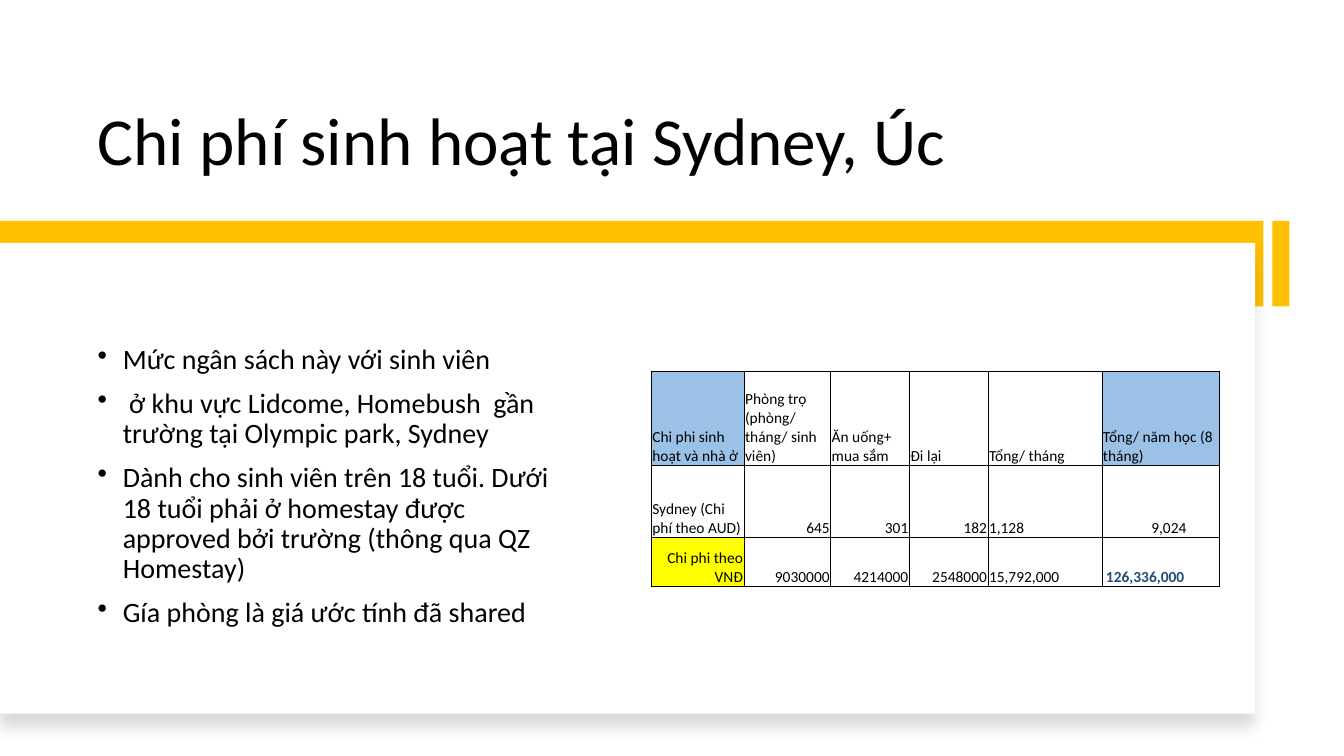
"""Build the slide on student living costs in Sydney."""
from dataclasses import dataclass

from lxml.etree import SubElement
from pptx import Presentation
from pptx.dml.color import RGBColor
from pptx.enum.shapes import MSO_SHAPE
from pptx.enum.text import MSO_ANCHOR, PP_ALIGN
from pptx.oxml import parse_xml
from pptx.oxml.ns import nsdecls, qn
from pptx.util import Inches, Pt

FONT = "Calibri"
COLORS = {
    "black": "000000",
    "white": "FFFFFF",
    "gold": "FFC000",
    "blue": "9BC2E6",
    "yellow": "FFFF00",
    "navy": "1F4E78",
}


@dataclass
class Block:
    """A plain rectangle, in inches."""
    left: float
    top: float
    width: float
    height: float
    color: str
    shadow: bool = False


@dataclass
class Cell:
    """A table cell and how it differs from the rest."""
    text: str
    right: bool = False
    fill: str = ""
    color: str = "black"
    bold: bool = False
    indent: float = 0.01


BLOCKS = [
    Block(0, 2.19, 12.53, 0.85, "gold"),
    Block(0, 2.41, 12.45, 4.67, "white", shadow=True),
    Block(12.62, 2.19, 0.17, 0.85, "gold"),
]
BULLETS = [
    "Mức ngân sách này với sinh viên",
    " ở khu vực Lidcome, Homebush  gần trường tại Olympic park, Sydney",
    "Dành cho sinh viên trên 18 tuổi. Dưới 18 tuổi phải ở homestay được "
    "approved bởi trường (thông qua QZ Homestay)",
    "Gía phòng là giá ước tính đã shared",
]
COL_WIDTHS = [0.92, 0.86, 0.78, 0.78, 1.13, 1.16]
ROW_HEIGHTS = [0.94, 0.71, 0.49]
COSTS = [
    [
        Cell("Chi phi sinh hoạt và nhà ở", fill="blue"),
        Cell("Phòng trọ (phòng/ tháng/ sinh viên)"),
        Cell("Ăn uống+ mua sắm"),
        Cell("Đi lại"),
        Cell("Tổng/ tháng"),
        Cell("Tổng/ năm học (8 tháng)", fill="blue"),
    ],
    [
        Cell("Sydney (Chi phí theo AUD)"),
        *[Cell(t, right=True) for t in ("645", "301", "182")],
        Cell("1,128"),
        Cell("9,024", indent=0.49),
    ],
    [
        Cell("Chi phi theo VNĐ", right=True, fill="yellow"),
        *[Cell(t, right=True) for t in ("9030000", "4214000", "2548000")],
        Cell("15,792,000"),
        Cell("126,336,000", color="navy", bold=True, indent=0.04),
    ],
]


def rgb(name: str) -> RGBColor:
    """Look up a colour."""
    return RGBColor.from_string(COLORS[name])


def style(p, size: float, color: str = "black", bold: bool = False) -> None:
    """Set the font of a paragraph."""
    p.font.name = FONT
    p.font.size = Pt(size)
    p.font.bold = bold
    p.font.color.rgb = rgb(color)


def add_title(s, text: str) -> None:
    """Fill and place the title placeholder."""
    sp = s.shapes.title
    sp.left, sp.top = Inches(0.87), Inches(0.42)
    sp.width, sp.height = Inches(11.01), Inches(1.42)
    tf = sp.text_frame
    tf.text = text
    tf.word_wrap = True
    tf.vertical_anchor = MSO_ANCHOR.BOTTOM
    p = tf.paragraphs[0]
    p.alignment = PP_ALIGN.LEFT
    p.line_spacing = 0.9
    style(p, 48)


def add_block(s, block: Block) -> None:
    """Draw a rectangle, with a soft shadow below if asked."""
    sp = s.shapes.add_shape(
        MSO_SHAPE.RECTANGLE, Inches(block.left), Inches(block.top),
        Inches(block.width), Inches(block.height))
    sp.shadow.inherit = False
    sp.fill.solid()
    sp.fill.fore_color.rgb = rgb(block.color)
    sp.line.fill.background()
    if block.shadow:
        effects = sp._element.spPr.find(qn("a:effectLst"))
        effects.append(parse_xml(
            f'<a:outerShdw {nsdecls("a")} blurRad="{Pt(11)}" dist="{Pt(10)}" '
            f'dir="5400000" algn="t" rotWithShape="0">'
            f'<a:srgbClr val="{COLORS["black"]}"><a:alpha val="15000"/>'
            f'</a:srgbClr></a:outerShdw>'))


def add_bullets(s, lines: list[str]) -> None:
    """Write the bullet list."""
    sp = s.shapes.add_textbox(
        Inches(0.87), Inches(2.84), Inches(4.96), Inches(3.98))
    tf = sp.text_frame
    tf.word_wrap = True
    tf.vertical_anchor = MSO_ANCHOR.MIDDLE
    for i, line in enumerate(lines):
        p = tf.add_paragraph() if i else tf.paragraphs[0]
        p.text = line
        p.line_spacing = 0.9
        p.space_before = Pt(10)
        style(p, 20)
        pPr = p._p.get_or_add_pPr()
        pPr.set("marL", str(Inches(0.25)))
        pPr.set("indent", str(-Inches(0.25)))
        bullet = parse_xml(f'<a:buChar {nsdecls("a")} char="•"/>')
        pPr.find(qn("a:defRPr")).addprevious(bullet)


def add_borders(cell) -> None:
    """Put a thin black line on each side of a cell."""
    tcPr = cell._tc.get_or_add_tcPr()
    for i, side in enumerate("LRTB"):
        ln = parse_xml(f'<a:ln{side} {nsdecls("a")} w="{Pt(0.5)}"/>')
        fill = SubElement(ln, qn("a:solidFill"))
        SubElement(fill, qn("a:srgbClr"), val=COLORS["black"])
        tcPr.insert(i, ln)


def fill_cell(cell, data: Cell) -> None:
    """Write and format one table cell."""
    cell.margin_left = Inches(data.indent)
    cell.margin_right = cell.margin_top = Inches(0.01)
    cell.margin_bottom = 0
    cell.vertical_anchor = MSO_ANCHOR.BOTTOM
    if data.fill:
        cell.fill.solid()
        cell.fill.fore_color.rgb = rgb(data.fill)
    else:
        cell.fill.background()
    add_borders(cell)
    cell.text = data.text
    p = cell.text_frame.paragraphs[0]
    p.alignment = PP_ALIGN.RIGHT if data.right else PP_ALIGN.LEFT
    style(p, 11, data.color, data.bold)


def add_costs(s, rows: list[list[Cell]]) -> None:
    """Draw the cost table."""
    table = s.shapes.add_table(
        len(rows), len(COL_WIDTHS), Inches(6.46), Inches(3.68),
        Inches(sum(COL_WIDTHS)), Inches(sum(ROW_HEIGHTS))).table
    for col, width in zip(table.columns, COL_WIDTHS):
        col.width = Inches(width)
    for row, height, cells in zip(table.rows, ROW_HEIGHTS, rows):
        row.height = Inches(height)
        for cell, data in zip(row.cells, cells):
            fill_cell(cell, data)


def main() -> None:
    """Build and save the slide."""
    prs = Presentation()
    prs.slide_width, prs.slide_height = Inches(13.33), Inches(7.5)
    s = prs.slides.add_slide(prs.slide_layouts[5])
    add_title(s, "Chi phí sinh hoạt tại Sydney, Úc")
    for block in BLOCKS:
        add_block(s, block)
    add_bullets(s, BULLETS)
    add_costs(s, COSTS)
    prs.save("out.pptx")


if __name__ == "__main__":
    main()
